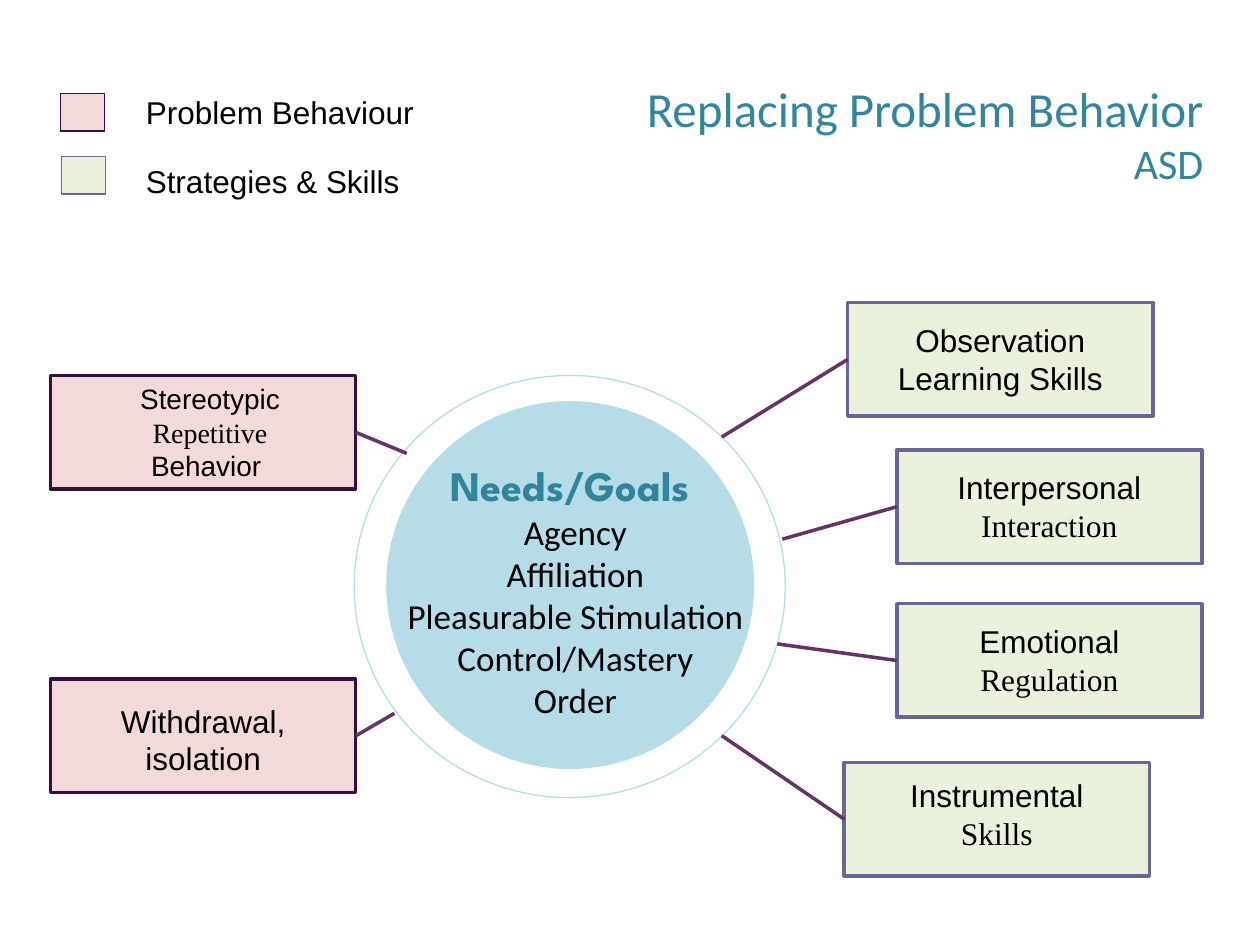
"""Builds the slide on replacing problem behavior in ASD around needs and goals."""
from dataclasses import dataclass

from lxml import etree
from pptx import Presentation
from pptx import util as u
from pptx.dml.color import RGBColor
from pptx.enum import shapes, text
from pptx.oxml import ns


@dataclass(frozen=True)
class Theme:
    problem: tuple = ("F2DADA", "330F42")
    skill: tuple = ("EAF1DD", "666699")
    ring: tuple = ("FFFFFF", "B6DDE7")
    disc: tuple = ("B6DDE7", "B6DDE7")
    link: str = "663366"
    title: str = "31859C"
    heading: str = "31859B"
    ink: str = "000000"
    sans: str = "Arial"
    serif: str = "Times New Roman"
    body: str = "Calibri"
    display: str = "League Spartan"
    title_size: int = 28
    heading_size: int = 24
    need_size: int = 20
    label_size: int = 18
    small_size: int = 16
    thin: float = 0.75
    thick: float = 2


theme = Theme()
prs = Presentation()
prs.slide_width, prs.slide_height = u.Cm(25.4), u.Cm(19.05)
slide = prs.slides.add_slide(prs.slide_layouts[5])


def add_figure(kind, place, colors, weight):
    figure = slide.shapes.add_shape(kind, *map(u.Cm, place))
    figure.shadow.inherit = False
    figure.fill.solid()
    figure.fill.fore_color.rgb = RGBColor.from_string(colors[0])
    figure.line.color.rgb = RGBColor.from_string(colors[1])
    figure.line.width = u.Pt(weight)


def add_label(place, lines, size, color=theme.ink, align=text.PP_ALIGN.CENTER, bold=False):
    frame = slide.shapes.add_textbox(*map(u.Cm, place)).text_frame
    frame.word_wrap = True
    for i, (words, font) in enumerate(lines):
        line = frame.add_paragraph() if i else frame.paragraphs[0]
        line.text = words
        line.alignment = align
        line.font.name, line.font.size, line.font.bold = font, u.Pt(size), bold
        line.font.color.rgb = RGBColor.from_string(color)


title = slide.shapes.title
title.left, title.top, title.width, title.height = map(u.Cm, (11.43, 1.09, 13.08, 3.18))
title.text_frame.auto_size = text.MSO_AUTO_SIZE.NONE
title.text_frame.vertical_anchor = text.MSO_ANCHOR.MIDDLE
headline = title.text_frame.paragraphs[0]
headline.text = "Replacing Problem Behavior\v"
headline.alignment = text.PP_ALIGN.RIGHT
headline.font.name, headline.font.size = theme.body, u.Pt(theme.title_size)
headline.font.color.rgb = RGBColor.from_string(theme.title)
subject = headline.add_run()
subject.text = "ASD"
subject.font.size = u.Pt(theme.heading_size)

add_figure(shapes.MSO_SHAPE.OVAL, (7.14, 7.57, 8.69, 8.51), theme.ring, theme.thin)
add_figure(shapes.MSO_SHAPE.OVAL, (7.8, 8.1, 7.39, 7.39), theme.disc, theme.thin)
add_label((8, 9.14, 6.99, 1.27), [("Needs/Goals", theme.display)],
          theme.heading_size, theme.heading, bold=True)
needs = ["Agency", "Affiliation", "Pleasurable Stimulation", "Control/Mastery", "Order"]
add_label((7.95, 10.16, 7.3, 4.52), [(need, theme.body) for need in needs], theme.need_size)

box_width, box_height = 6.15, 2.29
sans, serif = theme.sans, theme.serif
boxes = [
    (theme.skill, 17.09, 6.1, (14.55, 8.81), (0.25, box_width, 1.8), theme.label_size,
     [("Observation", sans), ("Learning Skills", sans)]),
    (theme.skill, 18.08, 9.07, (15.77, 10.87), (0.25, box_width, 1.8), theme.label_size,
     [("Interpersonal", sans), ("Interaction", serif)]),
    (theme.skill, 18.08, 12.17, (15.67, 12.98), (0.25, box_width, 1.8), theme.label_size,
     [("Emotional", sans), ("Regulation", serif)]),
    (theme.skill, 17.02, 15.37, (14.55, 14.83), (0.15, box_width, 1.5), theme.label_size,
     [("Instrumental", sans), ("Skills", serif)]),
    (theme.problem, 1.02, 7.57, (8.2, 9.14), (0, 6.43, 2.31), theme.small_size,
     [("Stereotypic", sans), ("Repetitive", serif), ("Behavior ", sans)]),
    (theme.problem, 1.02, 13.69, (7.95, 14.38), (0.33, box_width, 1.8), theme.label_size,
     [("Withdrawal, isolation", sans)]),
]
for colors, left, top, ring_point, (drop, width, height), size, lines in boxes:
    add_figure(shapes.MSO_SHAPE.FLOWCHART_PROCESS, (left, top, box_width, box_height),
               colors, theme.thick)
    edge = left if left > ring_point[0] else left + box_width
    link = slide.shapes.add_connector(
        shapes.MSO_CONNECTOR.STRAIGHT, *map(u.Cm, (*ring_point, edge, top + box_height / 2)))
    link.line.color.rgb = RGBColor.from_string(theme.link)
    link.line.width = u.Pt(theme.thick)
    etree.SubElement(link.element.spPr, ns.qn("a:effectLst"))
    add_label((left, top + drop, width, height), lines, size)

legend = [
    (theme.problem, 1.22, 1.88, 1.75, "Problem Behaviour"),
    (theme.skill, 1.24, 3.15, 3.15, "Strategies & Skills"),
]
for colors, left, top, label_top, meaning in legend:
    add_figure(shapes.MSO_SHAPE.FLOWCHART_PROCESS, (left, top, 0.89, 0.76), colors, theme.thin)
    add_label((2.69, label_top, 6.5, 1.02), [(meaning, theme.sans)],
              theme.label_size, align=text.PP_ALIGN.LEFT)

prs.save("out.pptx")
